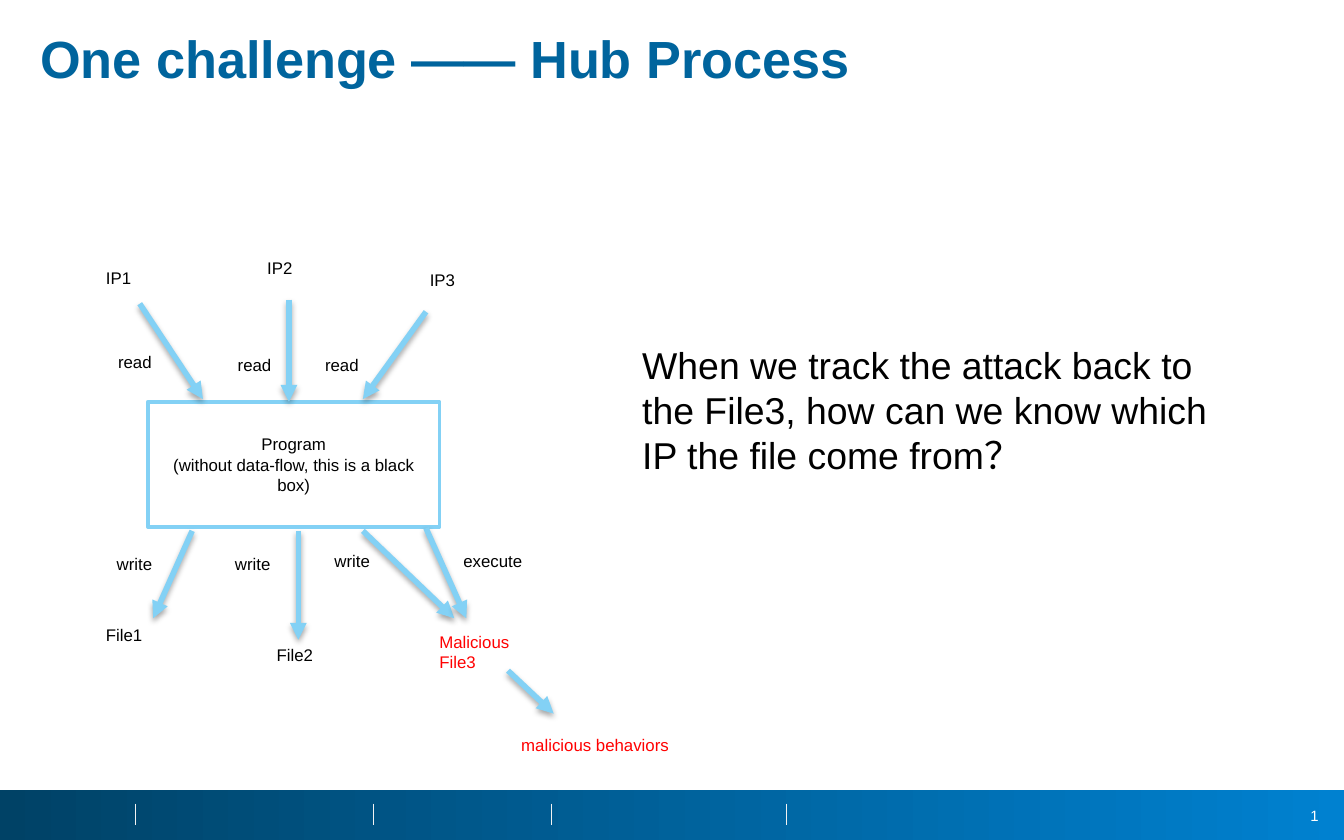
import pptx
import pptx.dml.color
import pptx.enum.dml
import pptx.enum.shapes
import pptx.enum.text
import pptx.oxml
import pptx.oxml.ns
import pptx.util
from typing import NamedTuple

Inches = pptx.util.Inches
Pt = pptx.util.Pt
RGBColor = pptx.dml.color.RGBColor
PP_ALIGN = pptx.enum.text.PP_ALIGN
MSO_ANCHOR = pptx.enum.text.MSO_ANCHOR

FONT = "Arial"
BLACK = RGBColor(0x00, 0x00, 0x00)
WHITE = RGBColor(0xFF, 0xFF, 0xFF)
RED = RGBColor(0xFF, 0x00, 0x00)
SKY = RGBColor(0x83, 0xD1, 0xF5)
TITLE_BLUE = RGBColor(0x00, 0x64, 0x9D)
FOOTER_DARK = RGBColor(0x00, 0x42, 0x66)
FOOTER_LIGHT = RGBColor(0x00, 0x81, 0xD0)
DIVIDER = RGBColor(0xF2, 0xF2, 0xF2)

NS = pptx.oxml.ns.nsdecls("a")
ARROWHEAD = f'<a:tailEnd {NS} type="triangle"/>'
NO_EFFECT = f"<a:effectLst {NS}/>"
SOFT_SHADOW = (
    f'<a:effectLst {NS}><a:outerShdw blurRad="{Pt(3.1)}" dist="{Pt(1.8)}" dir="5400000" '
    'rotWithShape="0"><a:srgbClr val="000000"><a:alpha val="35000"/></a:srgbClr>'
    "</a:outerShdw></a:effectLst>"
)
SLIDE_NUMBER = (
    f'<a:fld {NS} id="{{B6F15528-21DE-4FAA-801E-634DDDAF4B2B}}" type="slidenum">'
    '<a:rPr lang="en-US" sz="800"><a:solidFill><a:srgbClr val="FFFFFF"/></a:solidFill>'
    f'<a:latin typeface="{FONT}"/></a:rPr><a:t>32</a:t></a:fld>'
)


class Label(NamedTuple):
    text: str
    left: float
    top: float
    width: float
    height: float = 0.25
    color: RGBColor = BLACK
    size: float = 9
    wrap: bool = True


class Arrow(NamedTuple):
    x1: float
    y1: float
    x2: float
    y2: float


LABELS = [
    Label("IP1", 0.69, 1.94, 0.53),
    Label("IP2", 1.89, 1.87, 0.53),
    Label("IP3", 3.1, 1.96, 0.53),
    Label("File1", 0.69, 4.6, 0.53),
    Label("File2", 1.96, 4.75, 0.53),
    Label("Malicious File3", 3.17, 4.65, 0.95, 0.4, RED),
    Label("read", 0.78, 2.57, 0.45, wrap=False),
    Label("read", 1.67, 2.59, 0.45, wrap=False),
    Label("read", 2.32, 2.59, 0.45, wrap=False),
    Label("write", 0.77, 4.07, 0.47, wrap=False),
    Label("write", 1.65, 4.07, 0.47, wrap=False),
    Label("write", 2.39, 4.05, 0.47, wrap=False),
    Label("execute", 3.35, 4.05, 0.64, wrap=False),
    Label("malicious behaviors", 3.78, 5.42, 1.31, color=RED, wrap=False),
    Label("When we track the attack back to the File3, how can we know which "
          "IP the file come from？", 4.68, 2.5, 4.72, 1.11, size=20),
]
ARROWS = [
    Arrow(1.04, 2.26, 1.51, 2.97),
    Arrow(2.15, 2.23, 2.15, 2.99),
    Arrow(3.17, 2.32, 2.7, 2.97),
    Arrow(1.43, 3.95, 1.14, 4.6),
    Arrow(2.22, 3.95, 2.22, 4.76),
    Arrow(2.7, 3.95, 3.38, 4.6),
    Arrow(3.17, 3.93, 3.47, 4.6),
    Arrow(3.78, 4.99, 4.12, 5.31),
]
DIVIDER_XS = [1.01, 2.78, 4.1, 5.85]


def style_text(frame, size: float, color: RGBColor, bold: bool = False) -> None:
    for paragraph in frame.paragraphs:
        for run in paragraph.runs:
            run.font.name = FONT
            run.font.size = Pt(size)
            run.font.bold = bold
            run.font.color.rgb = color


def add_line(slide, x1: float, y1: float, x2: float, y2: float,
             color: RGBColor, weight: float, effect: str):
    line = slide.shapes.add_connector(
        pptx.enum.shapes.MSO_CONNECTOR.STRAIGHT,
        Inches(x1), Inches(y1), Inches(x2), Inches(y2))
    line.line.color.rgb = color
    line.line.width = Pt(weight)
    line._element.spPr.append(pptx.oxml.parse_xml(effect))
    return line


def add_arrow(slide, arrow: Arrow) -> None:
    line = add_line(slide, *arrow, SKY, 3, SOFT_SHADOW)
    line.line._get_or_add_ln().append(pptx.oxml.parse_xml(ARROWHEAD))


def add_label(slide, label: Label) -> None:
    box = slide.shapes.add_textbox(Inches(label.left), Inches(label.top),
                                   Inches(label.width), Inches(label.height))
    frame = box.text_frame
    frame.word_wrap = label.wrap
    frame.auto_size = pptx.enum.text.MSO_AUTO_SIZE.SHAPE_TO_FIT_TEXT
    frame.text = label.text
    style_text(frame, label.size, label.color)


def add_rectangle(slide, left: float, top: float, width: float, height: float):
    rectangle = slide.shapes.add_shape(
        pptx.enum.shapes.MSO_SHAPE.RECTANGLE,
        Inches(left), Inches(top), Inches(width), Inches(height))
    rectangle.shadow.inherit = False
    return rectangle


def add_footer(slide) -> None:
    band = add_rectangle(slide, 0, 5.88, 10, 0.37)
    band.line.fill.background()
    band.fill.gradient()
    band.fill.gradient_angle = 0
    for stop, color, position in zip(band.fill.gradient_stops,
                                     (FOOTER_DARK, FOOTER_LIGHT), (0, 1)):
        stop.color.rgb = color
        stop.position = position

    number = slide.shapes.add_textbox(Inches(9.49), Inches(5.95), Inches(0.42), Inches(0.24))
    number.text_frame.word_wrap = True
    number.text_frame.vertical_anchor = MSO_ANCHOR.MIDDLE
    paragraph = number.text_frame.paragraphs[0]
    paragraph.alignment = PP_ALIGN.RIGHT
    paragraph._p.append(pptx.oxml.parse_xml(SLIDE_NUMBER))

    for x in DIVIDER_XS:
        add_line(slide, x, 5.98, x, 6.14, DIVIDER, 0.25, NO_EFFECT)


def set_title(slide, text: str) -> None:
    title = slide.shapes.title
    title.left, title.top = Inches(0.2), Inches(0.2)
    title.width, title.height = Inches(9.55), Inches(0.36)
    frame = title.text_frame
    frame.text = text
    frame.word_wrap = True
    frame.auto_size = pptx.enum.text.MSO_AUTO_SIZE.NONE
    frame.vertical_anchor = MSO_ANCHOR.TOP
    frame.paragraphs[0].alignment = PP_ALIGN.LEFT
    frame.paragraphs[0].line_spacing = 0.9
    style_text(frame, 28, TITLE_BLUE, bold=True)


def add_program(slide) -> None:
    program = add_rectangle(slide, 1.1, 2.99, 2.17, 0.93)
    program.fill.solid()
    program.fill.fore_color.rgb = WHITE
    program.line.color.rgb = SKY
    program.line.width = Pt(2)
    frame = program.text_frame
    frame.word_wrap = True
    frame.vertical_anchor = MSO_ANCHOR.MIDDLE
    frame.text = "Program\n(without data-flow, this is a black box)"
    for paragraph in frame.paragraphs:
        paragraph.alignment = PP_ALIGN.CENTER
    style_text(frame, 9, BLACK)


def main() -> None:
    deck = pptx.Presentation()
    deck.slide_width, deck.slide_height = Inches(10), Inches(6.25)
    slide = deck.slides.add_slide(deck.slide_layouts.get_by_name("Title Only"))
    add_footer(slide)
    set_title(slide, "One challenge —— Hub Process")
    add_program(slide)
    for arrow in ARROWS:
        add_arrow(slide, arrow)
    for label in LABELS:
        add_label(slide, label)
    deck.save("out.pptx")


if __name__ == "__main__":
    main()
